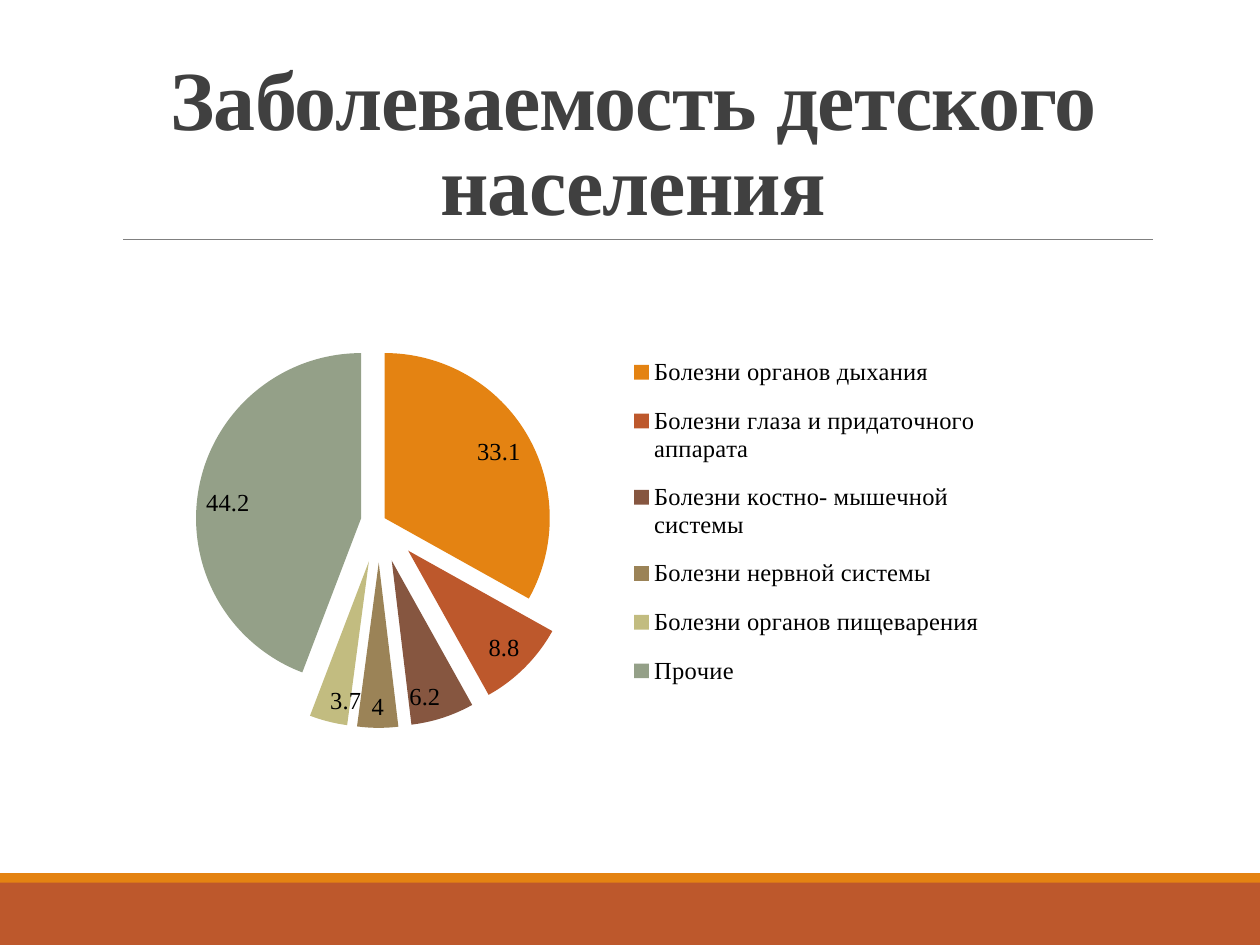
from dataclasses import dataclass
from lxml.etree import SubElement, Element
from pptx import Presentation
from pptx.chart.data import CategoryChartData as Data
from pptx.dml.color import RGBColor as Rgb
from pptx.enum.chart import XL_CHART_TYPE as Kind, XL_LABEL_POSITION as Spot, XL_LEGEND_POSITION as Side
from pptx.enum.shapes import MSO_CONNECTOR as Link, MSO_SHAPE as Form
from pptx.enum.text import MSO_ANCHOR as Anchor, PP_ALIGN as Align
from pptx.oxml.ns import qn
from pptx.util import Inches, Pt


@dataclass(frozen=True)
class Theme:
    """Colours, fonts and type sizes of the slide."""
    ink: str = "404040"
    rule: str = "808080"
    black: str = "000000"
    bar: str = "BD582C"
    edge: str = "E48312"
    face: str = "Times New Roman"
    base: str = "Calibri"
    head: int = 48
    label: int = 14
    small: int = 10


LOOK = Theme()
WIDE, HIGH = Inches(10), Inches(7.5)
BURST = 25
CASES = [
    ("Болезни органов дыхания", 33.1, "E48312", 4),
    ("Болезни глаза и придаточного аппарата", 8.8, "BD582C", BURST),
    ("Болезни костно- мышечной системы", 6.2, "865640", BURST),
    ("Болезни нервной системы", 4, "9B8357", BURST),
    ("Болезни органов пищеварения", 3.7, "C2BC80", BURST),
    ("Прочие", 44.2, "94A088", 11),
]


def area(left, top, width, height):
    """Turn shares of the slide into lengths."""
    return int(left * WIDE), int(top * HIGH), int(width * WIDE), int(height * HIGH)


def style(font, size, face, tint):
    """Set the size, face and colour of a font."""
    font.size, font.name = Pt(size), face
    font.color.rgb = Rgb.from_string(tint)


def band(slide, top, height, tint):
    """Draw a full-width band."""
    shape = slide.shapes.add_shape(Form.RECTANGLE, *area(0, top, 1, height))
    shape.shadow.inherit = False
    shape.fill.solid()
    shape.fill.fore_color.rgb = Rgb.from_string(tint)
    shape.line.fill.background()


def rule(slide, left, right, top):
    """Draw a thin level line."""
    start, level, end, _ = area(left, top, right, 0)
    line = slide.shapes.add_connector(Link.STRAIGHT, start, level, end, level)
    line.line.color.rgb = Rgb.from_string(LOOK.rule)
    line.line.width = Pt(0.5)
    SubElement(line._element.spPr, qn("a:effectLst"))


def title(slide, text, box):
    """Write the heading at the foot of its box."""
    frame = slide.shapes.add_textbox(*area(*box)).text_frame
    frame.word_wrap = True
    frame.vertical_anchor = Anchor.BOTTOM
    frame.text = text
    para = frame.paragraphs[0]
    para.alignment, para.line_spacing = Align.CENTER, 0.85
    run = para.runs[0]
    style(run.font, LOOK.head, LOOK.face, LOOK.ink)
    run.font.bold = True
    run.font._element.set("spc", "-50")


def place(part, index, box, inner=False):
    """Give a chart part a fixed layout in shares of the chart."""
    for old in part.findall(qn("c:layout")):
        part.remove(old)
    layout = Element(qn("c:layout"))
    part.insert(index, layout)
    manual = SubElement(layout, qn("c:manualLayout"))
    pairs = [("layoutTarget", "inner")] if inner else []
    pairs += [("xMode", "edge"), ("yMode", "edge"), *zip("xywh", box)]
    for name, value in pairs:
        SubElement(manual, qn(f"c:{name}")).set("val", str(value))


def burst(mark, share):
    """Make an explosion setting before the given element."""
    item = Element(qn("c:explosion"))
    item.set("val", str(share))
    mark.addprevious(item)


def pie(slide, box):
    """Add the exploded pie with its labels and legend."""
    names, values, tints, shares = zip(*CASES)
    data = Data()
    data.categories = names
    data.add_series("Series 1", values)
    chart = slide.shapes.add_chart(Kind.PIE, *area(*box), data).chart
    style(chart.font, LOOK.small, LOOK.base, LOOK.black)
    chart.has_title = False
    chart.has_legend = True
    legend = chart.legend
    legend.position, legend.include_in_layout = Side.RIGHT, False
    style(legend.font, LOOK.label, LOOK.face, LOOK.black)
    place(legend._element, 1, (0.61, 0.2, 0.37, 0.6))
    place(chart._chartSpace.chart.plotArea, 0, (0.15, 0.1, 0.42, 0.8), True)
    plot = chart.plots[0]
    plot.vary_by_categories = True
    series = plot.series[0]
    for index, (tint, share) in enumerate(zip(tints, shares)):
        fill = series.points[index].format.fill
        fill.solid()
        fill.fore_color.rgb = Rgb.from_string(tint)
        if share != BURST:
            slice_ = series._element.findall(qn("c:dPt"))[index]
            burst(slice_.find(qn("c:spPr")), share)
    burst(series._element.find(qn("c:dPt")), BURST)
    labels = series.data_labels
    labels.show_value = True
    labels.position = Spot.INSIDE_END
    style(labels.font, LOOK.label, LOOK.face, LOOK.black)


def main():
    """Build and save the slide."""
    deck = Presentation()
    deck.slide_width, deck.slide_height = WIDE, HIGH
    slide = deck.slides.add_slide(deck.slide_layouts[6])
    band(slide, 14 / 15, 1 / 15, LOOK.bar)
    band(slide, 0.924, 0.01, LOOK.edge)
    rule(slide, 0.098, 0.915, 0.253)
    title(slide, "Заболеваемость детского населения", (0.09, 0.041, 0.825, 0.212))
    pie(slide, (0.02, 0.227, 0.78, 0.65))
    deck.save("out.pptx")


if __name__ == "__main__":
    main()
